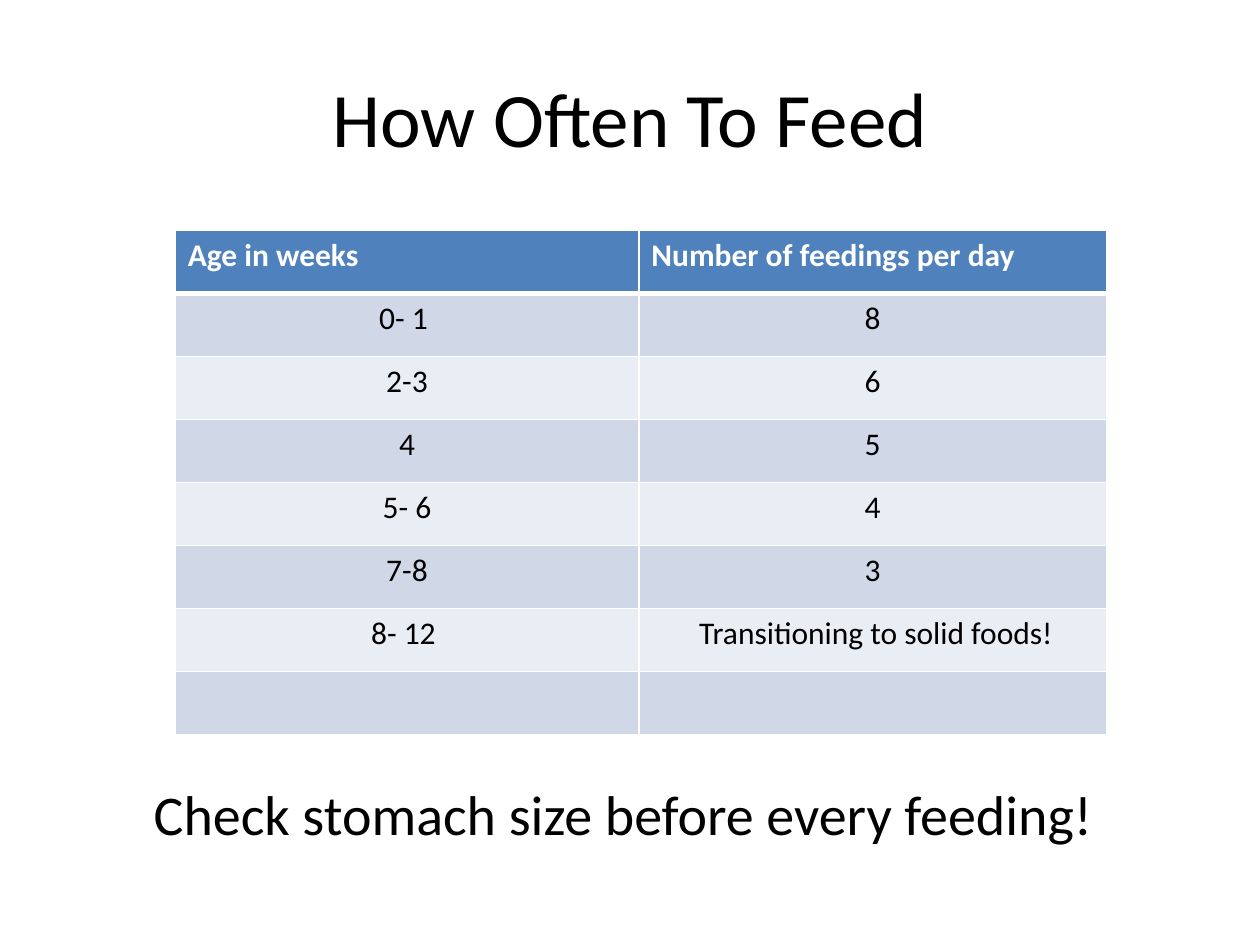
from lxml.etree import SubElement
from pptx import Presentation
from pptx.dml.color import RGBColor
from pptx.enum.text import MSO_ANCHOR as Anchor, PP_ALIGN as Align
from pptx.oxml.ns import qn
from pptx.util import Inches, Pt

WIDTH, HEIGHT = 10, 7.5
MARGIN = 0.05 * WIDTH
FONT = "Calibri"
BLACK, WHITE = "000000", "FFFFFF"
HEADER_FILL = "4F81BD"
BAND_FILLS = ("D0D8E8", "E9EDF4")

FEEDINGS = [
    ("Age in weeks", "Number of feedings per day"),
    ("0- 1 ", "8"),
    ("2-3", "6"),
    ("4", "5"),
    ("5- 6", "4"),
    ("7-8", "3"),
    ("8- 12 ", " Transitioning to solid foods!"),
    ("", ""),
]
COLUMN_WIDTHS = (3.68, 3.71)
ROW_HEIGHT = 0.5


def color(value):
    return RGBColor.from_string(value)


def style_text(para, size, ink=BLACK, align=Align.CENTER, bold=False):
    para.alignment = align
    para.font.name = FONT
    para.font.size = Pt(size)
    para.font.bold = bold
    para.font.color.rgb = color(ink)


def add_line(page, text, top, height, size):
    """Add one centred line of text between the side margins."""
    box = page.shapes.add_textbox(Inches(MARGIN), Inches(top),
                                  Inches(WIDTH - 2 * MARGIN), Inches(height))
    frame = box.text_frame
    frame.word_wrap = True
    frame.vertical_anchor = Anchor.MIDDLE
    frame.text = text
    style_text(frame.paragraphs[0], size)


def set_borders(cell, **widths):
    """Draw white cell borders; they must come before the fill in the XML."""
    properties = cell._tc.get_or_add_tcPr()
    for side, width in widths.items():
        line = SubElement(properties, qn(f"a:ln{side}"), w=str(Pt(width)))
        fill = SubElement(line, qn("a:solidFill"))
        SubElement(fill, qn("a:srgbClr"), val=WHITE)


def add_feeding_table(page, left, top):
    frame = page.shapes.add_table(
        len(FEEDINGS), len(COLUMN_WIDTHS), Inches(left), Inches(top),
        Inches(sum(COLUMN_WIDTHS)), Inches(ROW_HEIGHT * len(FEEDINGS)))
    table = frame.table
    for column, width in zip(table.columns, COLUMN_WIDTHS):
        column.width = Inches(width)

    for row, values in enumerate(FEEDINGS):
        table.rows[row].height = Inches(ROW_HEIGHT)
        header = row == 0
        for column, value in enumerate(values):
            cell = table.cell(row, column)
            set_borders(cell, L=1, R=1, T=3 if row == 1 else 1,
                        B=3 if header else 1)
            cell.fill.solid()
            cell.fill.fore_color.rgb = color(
                HEADER_FILL if header else BAND_FILLS[(row - 1) % 2])
            cell.text = value
            para = cell.text_frame.paragraphs[0]
            if header:
                style_text(para, 18, WHITE, Align.LEFT, bold=True)
            else:
                style_text(para, 18)


def main():
    deck = Presentation()
    deck.slide_width, deck.slide_height = Inches(WIDTH), Inches(HEIGHT)
    page = deck.slides.add_slide(deck.slide_layouts[6])

    # Title
    add_line(page, "How Often To Feed", 0.04 * HEIGHT, 1.25, 44)
    # Feeding schedule
    add_feeding_table(page, 1.39, 1.83)
    # Reminder
    add_line(page, "Check stomach size before every feeding! ", 6.1, 0.7, 32)

    deck.save("out.pptx")


if __name__ == "__main__":
    main()
